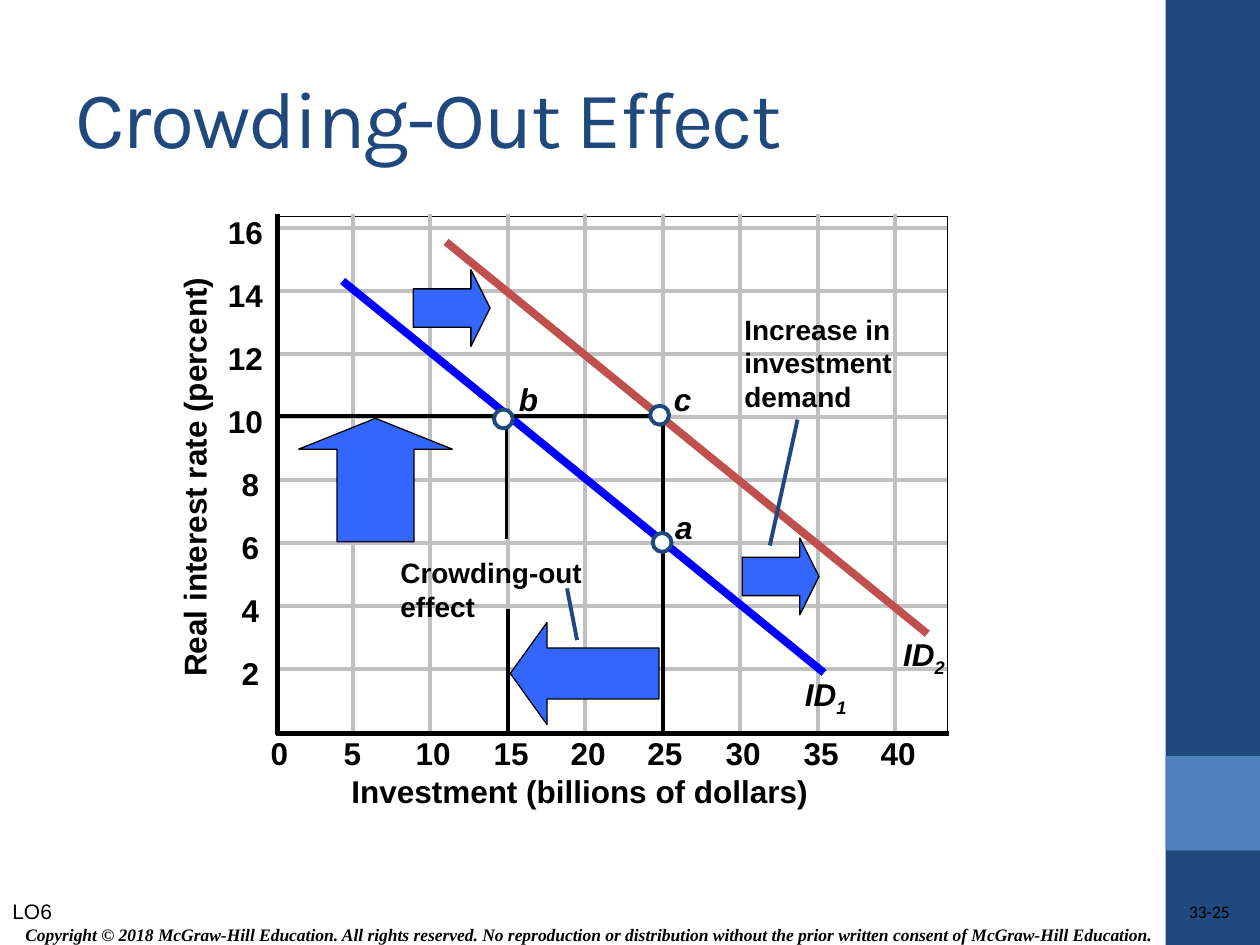
"""Build the Crowding-Out Effect slide."""
from dataclasses import dataclass

from lxml.etree import SubElement
from pptx import Presentation as Deck
from pptx.dml.color import RGBColor as Rgb
from pptx.enum.shapes import MSO_CONNECTOR as Join, MSO_SHAPE as Kind
from pptx.enum.text import MSO_ANCHOR as Anchor, MSO_AUTO_SIZE as Auto, PP_ALIGN as Align
from pptx.oxml.ns import qn
from pptx.util import Pt

SCALE = 9144


def px(*nums):
    return [n * SCALE for n in nums]


@dataclass(frozen=True)
class Theme:
    navy: str = "1F497D"
    sky: str = "4F81BD"
    black: str = "000000"
    white: str = "FFFFFF"
    grey: str = "C0C0C0"
    blue: str = "0000FF"
    red: str = "C0504D"
    arrow: str = "3366FF"
    head: int = 46
    label: int = 18
    note: int = 16
    small: int = 12
    foot: int = 10
    thin: float = 0.75
    mid: float = 2.25
    axis: float = 3
    curve: float = 4.5
    sans: str = "Arial"
    title: str = "Karla"
    serif: str = "Times New Roman"
    plain: str = "Calibri"


class Page:
    def __init__(self, slide, theme):
        self.shapes = slide.shapes
        self.theme = theme

    def shape(self, kind, box, fill=None, line=None, width=0.75, adjust=()):
        item = self.shapes.add_shape(kind, *px(*box))
        item.shadow.inherit = False
        if fill:
            item.fill.solid()
            item.fill.fore_color.rgb = Rgb.from_string(fill)
        else:
            item.fill.background()
        if line:
            item.line.color.rgb = Rgb.from_string(line)
            item.line.width = Pt(width)
        else:
            item.line.fill.background()
        for i, num in enumerate(adjust):
            item.adjustments[i] = num

    def line(self, start, end, color, width):
        item = self.shapes.add_connector(Join.STRAIGHT, *px(*start, *end))
        item.line.color.rgb = Rgb.from_string(color)
        item.line.width = Pt(width)
        SubElement(item._element.spPr, qn("a:effectLst"))

    def text(self, words, box, size=None, face=None, color=None, bold=False, slant=False,
             wrap=False, align=Align.LEFT, anchor=Anchor.TOP, sub="", turn=0,
             inset=None, pitch=None, track=None):
        item = self.shapes.add_textbox(*px(*box))
        item.rotation = turn
        frame = item.text_frame
        frame.word_wrap = wrap
        frame.auto_size = Auto.NONE if wrap else Auto.SHAPE_TO_FIT_TEXT
        frame.vertical_anchor = anchor
        if inset is not None:
            frame.margin_left = frame.margin_right = inset
            frame.margin_top = frame.margin_bottom = inset
        frame.text = words
        if sub:
            run = frame.paragraphs[0].add_run()
            run.text = sub
            run.font._element.set("baseline", "-25000")
        for para in frame.paragraphs:
            para.alignment = align
            if pitch:
                para.line_spacing = pitch
            for run in para.runs:
                font = run.font
                font.size = Pt(size or self.theme.label)
                font.name = face or self.theme.sans
                font.bold, font.italic = bold, slant
                font.color.rgb = Rgb.from_string(color or self.theme.black)
                if track:
                    font._element.set("spc", str(track))


def frame(page, look):
    page.shape(Kind.RECTANGLE, (925, 0, 75, 750), look.navy)
    page.shape(Kind.RECTANGLE, (925, 600, 75, 75), look.sky)
    page.text("Copyright © 2018 McGraw-Hill Education. All rights reserved. No reproduction or "
              "distribution without the prior written consent of McGraw-Hill Education.",
              (6, 728, 922, 28), look.foot, look.serif, bold=True, slant=True, wrap=True,
              align=Align.CENTER, anchor=Anchor.MIDDLE)
    page.text("33-25", (781, 715, 195, 20), look.foot, look.plain, wrap=True,
              align=Align.RIGHT, inset=0, pitch=1.02)
    page.text("Crowding-Out Effect", (50, 30, 833, 125), look.head, look.title, look.navy,
              wrap=True, anchor=Anchor.MIDDLE, track=-100)
    page.text("LO6", (0, 708, 83, 30), look.small, wrap=True)


def grid(page, look):
    page.shape(Kind.RECTANGLE, (219, 172, 533, 411), line=look.black, width=look.thin)
    page.line((220, 170), (220, 582), look.black, look.axis)
    page.line((219, 582), (753, 582), look.black, look.axis)
    for i in range(8):
        x, y = 280 + round(i * 430 / 7), 531 - 50 * i
        page.line((x, 170), (x, 580), look.grey, look.mid)
        page.line((222, y), (752, y), look.grey, look.mid)
    page.text("0", (205, 578, 34, 40), bold=True)
    for i in range(8):
        x, y = 320 + round((i - 1) * 61.5), 514 - 50 * i
        left, wide = (x, 48) if i else (263, 34)
        page.text(str(5 * i + 5), (left, 578, wide, 40), bold=True)
        rate = 2 * i + 2
        left, wide = (171, 48) if rate > 9 else (182, 34)
        page.text(str(rate), (left, y, wide, 40), bold=True)
    page.text("Real interest rate (percent)", (-16, 357, 340, 40), bold=True, turn=270)
    page.text("Investment (billions of dollars)", (269, 608, 386, 40), bold=True)


def curves(page, look):
    page.line((272, 223), (654, 534), look.blue, look.curve)
    page.line((354, 192), (736, 503), look.red, look.curve)
    for sub, x, y in (("1", 629, 531), ("2", 707, 499)):
        page.text("ID", (x, y, 55, 40), bold=True, slant=True, sub=sub)
    for name, x, y in (("a", 526, 398), ("b", 402, 297), ("c", 525, 297)):
        page.text(name, (x, y, 34, 40), bold=True, slant=True)
    for start, end in (((526, 327), (526, 581)), ((402, 328), (402, 428)),
                       ((526, 330), (222, 330)), ((403, 483), (403, 583))):
        page.line(start, end, look.black, look.mid)
    for x, y in ((518, 423), (516, 322), (392, 325)):
        page.shape(Kind.OVAL, (x, y, 15, 15), look.white, look.navy, look.mid)


def notes(page, look):
    for kind, box, tip in ((Kind.UP_ARROW, (237, 332, 122, 98), 0.25),
                           (Kind.LEFT_ARROW, (405, 494, 118, 81), 0.36),
                           (Kind.RIGHT_ARROW, (328, 214, 61, 61), 0.25),
                           (Kind.RIGHT_ARROW, (589, 427, 61, 61), 0.25)):
        page.shape(kind, box, look.arrow, look.black, look.thin, (0.5, tip))
    page.text("Increase in\ninvestment\ndemand", (581, 243, 144, 91), look.note, bold=True)
    page.line((633, 333), (611, 433), look.navy, look.mid)
    page.text("Crowding-out\neffect", (308, 436, 172, 60), look.note, bold=True)
    page.line((450, 467), (458, 508), look.navy, look.mid)


def main():
    deck = Deck()
    deck.slide_width, deck.slide_height = px(1000, 750)
    look = Theme()
    page = Page(deck.slides.add_slide(deck.slide_layouts[6]), look)
    for part in (frame, grid, curves, notes):
        part(page, look)
    deck.save("out.pptx")


if __name__ == "__main__":
    main()
